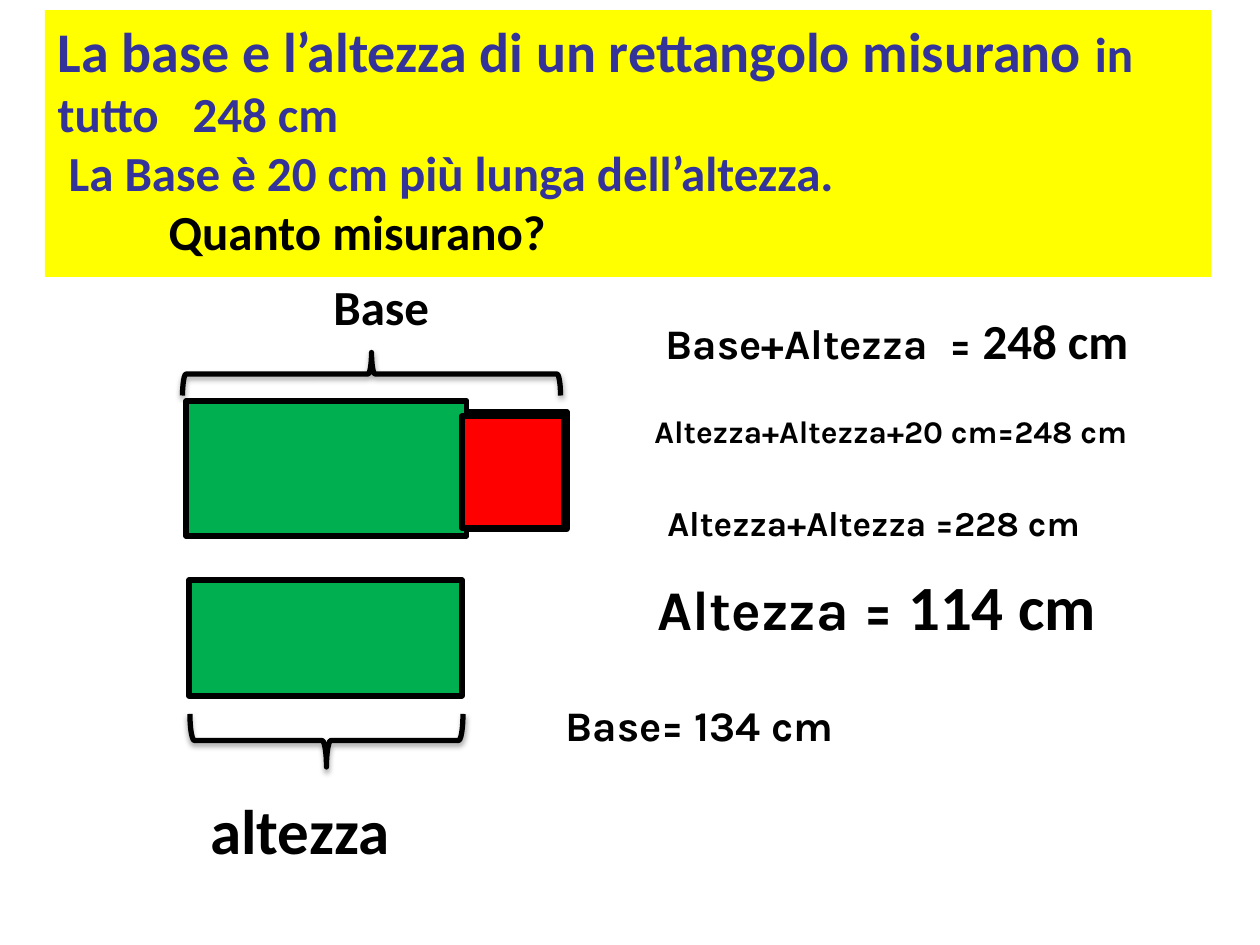
"""Build a slide that solves for the base and height of a rectangle."""
from lxml import etree
from pptx import Presentation
from pptx.dml.color import RGBColor
from pptx.enum.shapes import MSO_SHAPE
from pptx.enum.text import MSO_ANCHOR, PP_ALIGN
from pptx.oxml import parse_xml
from pptx.oxml.ns import qn
from pptx.util import Emu, Pt

RECT, BRACE = MSO_SHAPE.RECTANGLE, MSO_SHAPE.LEFT_BRACE
TOP, LEFT = MSO_ANCHOR.TOP, PP_ALIGN.LEFT
PX = 914400 // 126
NS = "http://schemas.openxmlformats.org/drawingml/2006/main"

THEME = {
    "ink": "000000", "blue": "333399", "yellow": "FFFF00",
    "green": "00B050", "red": "FF0000",
    "sans": "Calibri", "math": "Karla", "line": 3,
    "tiny": 18, "small": 20, "mid": 24, "body": 28, "big": 32, "huge": 36,
}

TITLE_BOX = (45, 10, 1166, 267)
TITLE = [
    (0, 135, [("La base e l’altezza di un rettangolo misurano ", "sans", "big", "blue"),
              ("in tutto\t248 cm", "sans", "body", "blue")]),
    (11, 0, [("La Base è 20 cm più lunga dell’altezza.", "sans", "body", "blue")]),
    (111, 0, [("Quanto misurano?", "sans", "body", "ink")]),
]
BARS = [
    ((189, 580, 273, 116), "green"),
    ((189, 412, 378, 117), "green"),
    ((186, 401, 281, 135), "green"),
    ((462, 416, 102, 112), "red"),
]
BRACES = [((350, 185, 43, 378), 90), ((300, 604, 53, 273), 270)]
LABELS = [
    ((321, 270, 263, 72), 0, [("Base", "sans", "body", "ink")]),
    ((198, 785, 247, 89), 0, [("altezza", "sans", "huge", "ink")]),
    ((653, 304, 607, 72), 284, [("Base+Altezza\t= ", "math", "mid", "ink"),
                                ("248 cm", "sans", "body", "ink")]),
    ((642, 406, 618, 60), 0, [("Altezza+Altezza+20 cm=248 cm", "math", "tiny", "ink")]),
    ((655, 495, 605, 60), 0, [("Altezza+Altezza =228 cm", "math", "small", "ink")]),
    ((645, 561, 576, 90), 0, [("Altezza = ", "math", "big", "ink"),
                              ("114 cm", "sans", "huge", "ink")]),
    ((553, 693, 707, 60), 0, [("Base= 134 cm", "math", "mid", "ink")]),
]


def scale(box):
    return [Emu(n * PX) for n in box]


def color(name):
    return RGBColor.from_string(THEME[name])


def write(par, runs, dent=0, tab=0):
    par.alignment = LEFT
    par.space_before = Pt(0)
    props = par._p.get_or_add_pPr()
    if dent:
        props.set("marL", str(dent * PX))
    if tab:
        stops = etree.SubElement(props, qn("a:tabLst"))
        etree.SubElement(stops, qn("a:tab"), pos=str(tab * PX), algn="l")
    for text, face, size, ink in runs:
        run = par.add_run()
        run.text = text
        run.font.name = THEME[face]
        run.font.size = Pt(THEME[size])
        run.font.bold = True
        run.font.color.rgb = color(ink)


def add_title(slide):
    title = slide.shapes.title
    title.left, title.top, title.width, title.height = scale(TITLE_BOX)
    title.fill.solid()
    title.fill.fore_color.rgb = color("yellow")
    frame = title.text_frame
    frame.word_wrap = True
    frame.vertical_anchor = TOP
    for i, (dent, tab, runs) in enumerate(TITLE):
        par = frame.add_paragraph() if i else frame.paragraphs[0]
        write(par, runs, dent, tab)


def add_shape(slide, kind, box):
    shape = slide.shapes.add_shape(kind, *scale(box))
    shape.shadow.inherit = False
    shape.line.color.rgb = color("ink")
    shape.line.width = Pt(THEME["line"])
    return shape


def add_bar(slide, box, fill):
    bar = add_shape(slide, RECT, box)
    bar.fill.solid()
    bar.fill.fore_color.rgb = color(fill)


def add_brace(slide, box, turn):
    brace = add_shape(slide, BRACE, box)
    brace.rotation = turn
    brace.fill.background()
    glow = parse_xml(
        f'<a:outerShdw xmlns:a="{NS}" blurRad="40000" dist="23000" dir="5400000"'
        f' rotWithShape="0"><a:srgbClr val="{THEME["ink"]}">'
        '<a:alpha val="35000"/></a:srgbClr></a:outerShdw>')
    brace._element.spPr.find(qn("a:effectLst")).append(glow)


def add_label(slide, box, tab, runs):
    frame = slide.shapes.add_textbox(*scale(box)).text_frame
    frame.word_wrap = True
    write(frame.paragraphs[0], runs, tab=tab)


def main():
    deck = Presentation()
    deck.slide_width, deck.slide_height = scale((1260, 945))
    slide = deck.slides.add_slide(deck.slide_layouts[5])
    add_title(slide)
    for bar in BARS:
        add_bar(slide, *bar)
    for brace in BRACES:
        add_brace(slide, *brace)
    for label in LABELS:
        add_label(slide, *label)
    deck.save("out.pptx")


if __name__ == "__main__":
    main()
